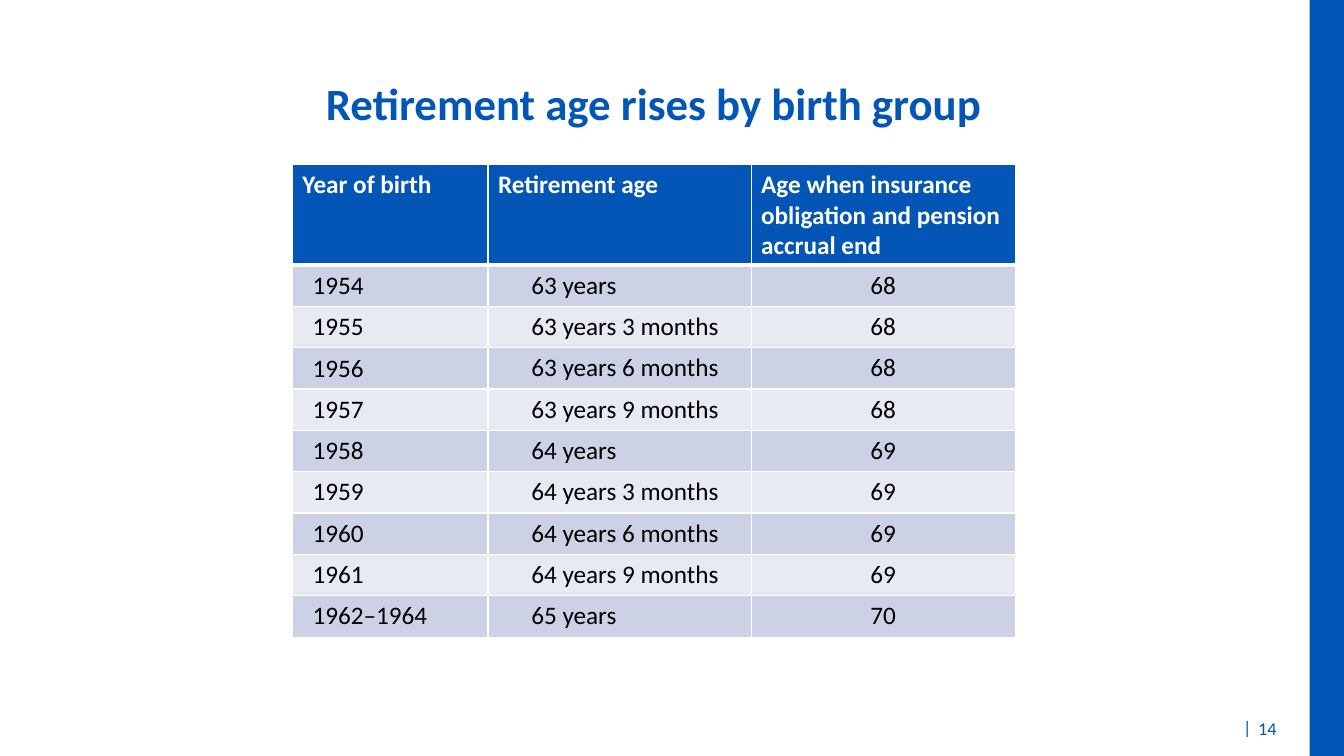
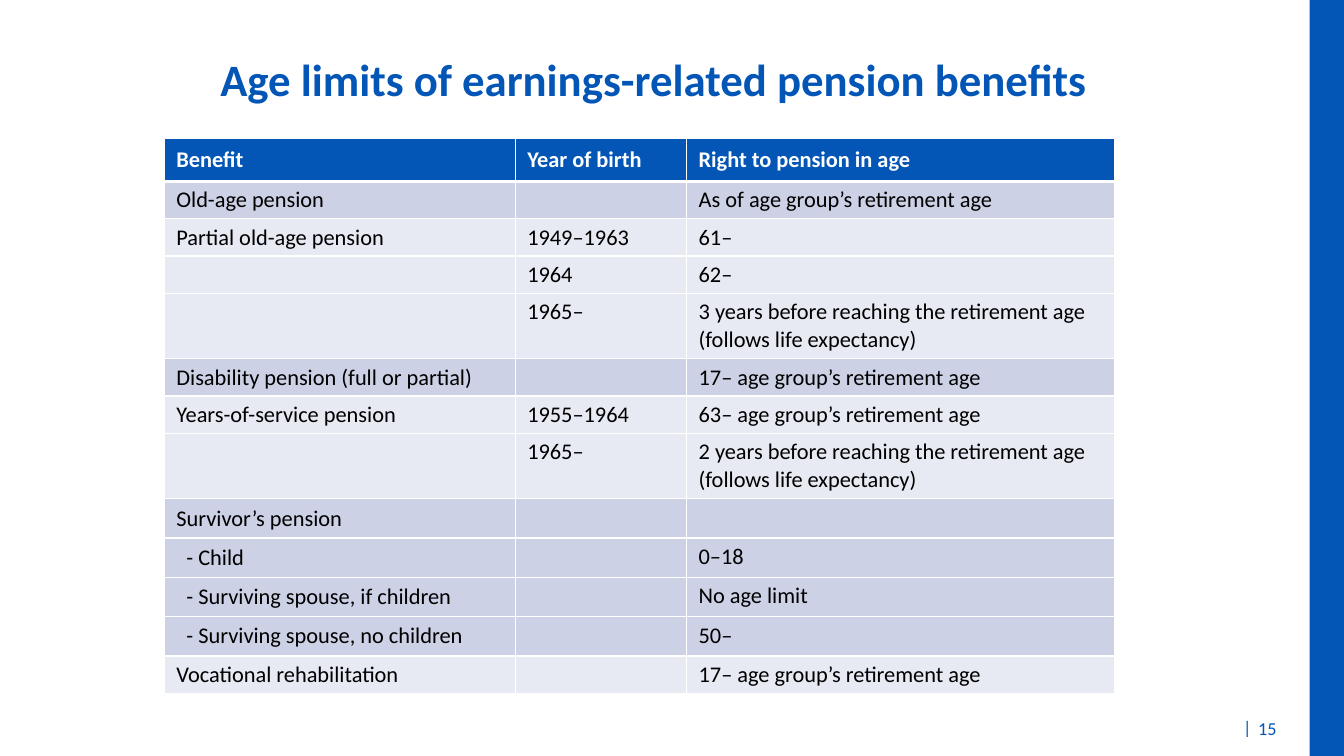
from lxml import etree
from pptx import Presentation
from pptx import util as u
from pptx.dml.color import RGBColor
from pptx.enum import shapes, text
from pptx.oxml.ns import qn

COLOURS = {"blue": "0356B5", "dark": "CCD1E5", "light": "E7E9F3",
           "white": "FFFFFF", "black": "000000"}
FONT = "Calibri"
MIDDLE, TOP = text.MSO_ANCHOR.MIDDLE, text.MSO_ANCHOR.TOP
LEFT, CENTER = text.PP_ALIGN.LEFT, text.PP_ALIGN.CENTER


def write(frame, words, size=16, colour="black", bold=False, align=LEFT,
          anchor=TOP, wrap=True):
    frame.word_wrap = wrap
    frame.vertical_anchor = anchor
    para = frame.paragraphs[0]
    para.alignment = align
    if not words:  # an empty cell still needs its text size
        etree.SubElement(para._p, qn("a:endParaRPr"), sz=str(size * 100))
        return
    span = para.add_run()
    span.text = words
    span.font.name, span.font.size, span.font.bold = FONT, u.Pt(size), bold
    span.font.color.rgb = RGBColor.from_string(COLOURS[colour])


def add_borders(cell, widths):
    for side, width in widths.items():
        line = etree.SubElement(cell._tc.get_or_add_tcPr(), qn(f"a:ln{side}"),
                                w=str(int(u.Pt(width))))
        fill = etree.SubElement(line, qn("a:solidFill"))
        etree.SubElement(fill, qn("a:srgbClr"), val=COLOURS["white"])


# Content of the two slides
retirement_ages = [
    ("Year of birth", "Retirement age",
     "Age when insurance obligation and pension accrual end"),
    ("1954", "63 years", "68"),
    ("1955", "63 years 3 months", "68"),
    ("1956", "63 years 6 months", "68"),
    ("1957", "63 years 9 months", "68"),
    ("1958", "64 years", "69"),
    ("1959", "64 years 3 months", "69"),
    ("1960", "64 years 6 months", "69"),
    ("1961", "64 years 9 months", "69"),
    ("1962–1964", "65 years", "70"),
]
age_limits = [
    ("Benefit", "Year of birth", "Right to pension in age"),
    ("Old-age pension", "", "As of age group’s retirement age"),
    ("Partial old-age pension", "1949–1963", "61–"),
    ("", "1964", "62–"),
    ("", "1965–", "3 years before reaching the retirement age "
     "(follows life expectancy)"),
    ("Disability pension (full or partial)", "",
     "17– age group’s retirement age"),
    ("Years-of-service pension", "1955–1964",
     "63– age group’s retirement age"),
    ("", "1965–", "2 years before reaching the retirement age "
     "(follows life expectancy)"),
    ("Survivor’s pension", "", ""),
    ("- Child", "", "0–18"),
    ("- Surviving spouse, if children", "", "No age limit"),
    ("- Surviving spouse, no children", "", "50–"),
    ("Vocational rehabilitation", "", "17– age group’s retirement age"),
]
pages = [
    dict(number="14", title="Retirement age rises by birth group",
         title_top=0.7, rows=retirement_ages, left=2.9, top=1.63, size=18,
         widths=[1.94, 2.61, 2.62], heights=[1] + [0.41] * 9,
         head_anchor=TOP, head_inset=0.1, insets=[0.2, 0.43, 0.08],
         right_insets=[0.1, 0.1, 0.08], aligns=[LEFT, LEFT, CENTER]),
    dict(number="15", title="Age limits of earnings-related pension benefits",
         title_top=0.46, rows=age_limits, left=1.63, top=1.37, size=16,
         widths=[3.48, 1.7, 4.24],
         heights=[0.43] + [0.37] * 3 + [0.65] + [0.37] * 2 + [0.65]
         + [0.39] * 4 + [0.37],
         head_anchor=MIDDLE, head_inset=0.12, insets=[0.12] * 3,
         right_insets=[0.05] * 3, aligns=[LEFT] * 3),
]

deck = Presentation()
deck.slide_width, deck.slide_height = u.Inches(13.33), u.Inches(7.5)

for content in pages:
    page = deck.slides.add_slide(deck.slide_layouts[6])

    # Band at the right edge
    band = page.shapes.add_shape(shapes.MSO_SHAPE.RECTANGLE, u.Inches(12.99), 0,
                                 u.Inches(0.35), deck.slide_height)
    band.shadow.inherit = False
    band.fill.solid()
    band.fill.fore_color.rgb = RGBColor.from_string(COLOURS["blue"])
    band.line.fill.background()

    # Title, page mark and page number
    for words, place, style in [
        (content["title"], (0, content["title_top"], 12.97, 0.7),
         dict(size=32, bold=True, align=CENTER)),
        ("|", (12.23, 7.06, 0.29, 0.35), dict(size=13, wrap=False)),
        (content["number"], (12.38, 7.05, 0.44, 0.35),
         dict(size=13, anchor=MIDDLE)),
    ]:
        box = page.shapes.add_textbox(*map(u.Inches, place))
        write(box.text_frame, words, colour="blue", **style)

    # Table
    rows, widths, heights = content["rows"], content["widths"], content["heights"]
    table = page.shapes.add_table(
        len(rows), len(widths), u.Inches(content["left"]),
        u.Inches(content["top"]), u.Inches(sum(widths)),
        u.Inches(sum(heights))).table
    for column, width in zip(table.columns, widths):
        column.width = u.Inches(width)

    shade = "light"
    for r, row in enumerate(rows):
        table.rows[r].height = u.Inches(heights[r])
        head = r == 0
        sub_item = row[0].startswith("- ")
        # The shade changes with each new group
        if not head and row[0] and not sub_item:
            shade = "dark" if shade == "light" else "light"
        for c, words in enumerate(row):
            cell = table.cell(r, c)
            indent = 0.1 if sub_item and c == 0 else 0
            inset = content["head_inset"] if head else content["insets"][c]
            right = content["head_inset"] if head else content["right_insets"][c]
            cell.margin_left = u.Inches(inset + indent)
            cell.margin_right = u.Inches(right)
            cell.margin_top = cell.margin_bottom = u.Inches(0.05)
            add_borders(cell, {
                "L": 0.25 if c == 0 else 1,
                "R": 0.25 if c == len(row) - 1 else 1,
                "T": 0.25 if head else 1,
                "B": 3 if head else 0.25 if r == len(rows) - 1 else 1})
            cell.fill.solid()
            cell.fill.fore_color.rgb = RGBColor.from_string(
                COLOURS["blue" if head else shade])
            body_anchor = MIDDLE if c == 0 else TOP
            anchor = content["head_anchor"] if head else body_anchor
            write(cell.text_frame, words, size=content["size"], bold=head,
                  colour="white" if head else "black",
                  align=LEFT if head else content["aligns"][c])
            cell.vertical_anchor = anchor

deck.save("out.pptx")
